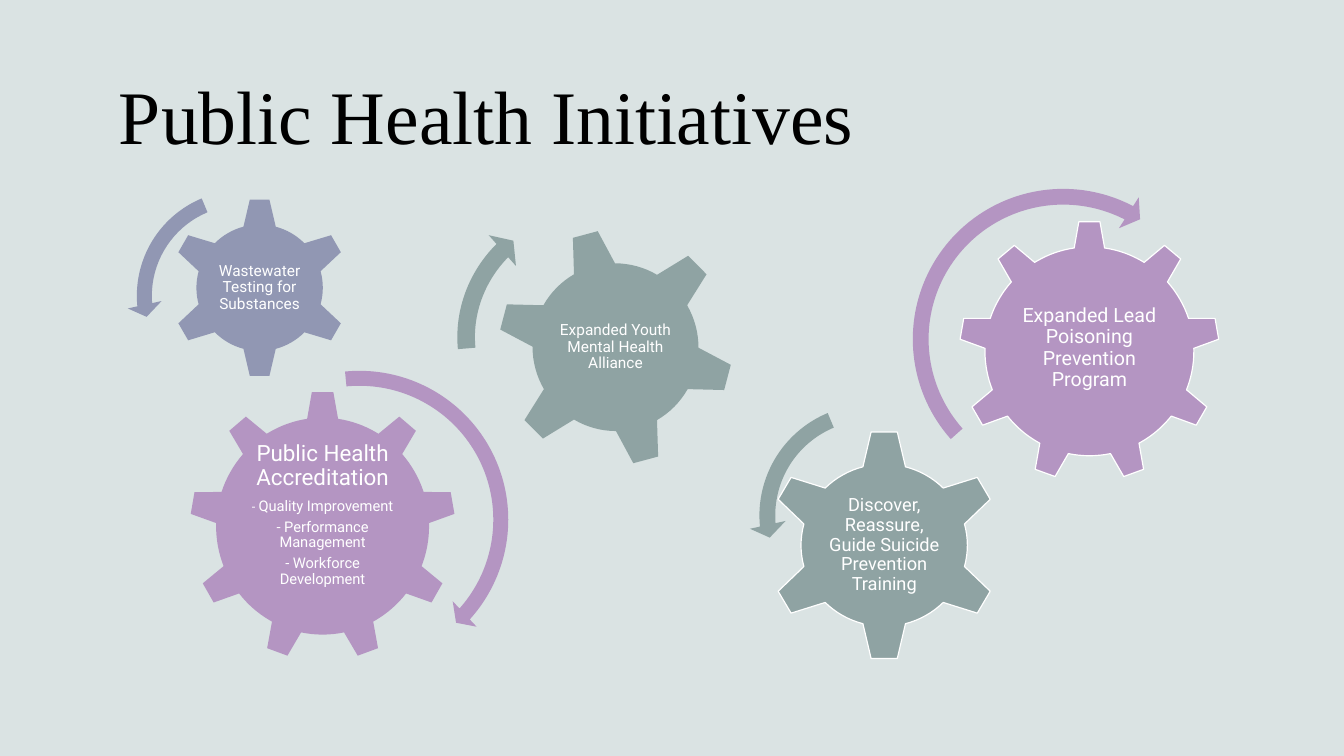
from pptx import Presentation
from pptx.dml.color import RGBColor
from pptx.enum.shapes import MSO_SHAPE
from pptx.enum.text import MSO_ANCHOR, PP_ALIGN
from pptx.util import Inches, Pt

GEAR_6, GEAR_9 = MSO_SHAPE.GEAR_6, MSO_SHAPE.GEAR_9
CLOCKWISE, COUNTER = MSO_SHAPE.CIRCULAR_ARROW, MSO_SHAPE.LEFT_CIRCULAR_ARROW
MIDDLE, BOTTOM = MSO_ANCHOR.MIDDLE, MSO_ANCHOR.BOTTOM
LEFT, CENTER = PP_ALIGN.LEFT, PP_ALIGN.CENTER

BACKGROUND = RGBColor(0xDA, 0xE3, 0xE3)
PURPLE = RGBColor(0xB4, 0x95, 0xC2)
BLUE = RGBColor(0x91, 0x97, 0xB3)
SAGE = RGBColor(0x8F, 0xA3, 0xA3)
WHITE = RGBColor(0xFF, 0xFF, 0xFF)
BLACK = RGBColor(0, 0, 0)

SLIDE_W, SLIDE_H = Inches(13.33), Inches(7.5)
CELL = SLIDE_H / 75
DEGREE = 0.6
INSET = 0.2

HEADING = "Public Health Initiatives"
HEADING_BOX = (66.65, 10.4, 111.7, 12.2)

COUNTER_SWEEP = (0.065, 7.17, 174.82, 247.3, 0.075)
INITIATIVES = [
    {"lines": [[("Public Health Accreditation", 16)],
               [("- ", 9), ("Quality Improvement", 10.5)],
               [("- Performance Management", 10.5)],
               [("- Workforce Development", 10.5)]],
     "color": PURPLE, "gear": GEAR_9, "box": (32, 52.2, 26.4, 26.8),
     "label": (15.8, 13.8), "lift": 2.2,
     "arrow": CLOCKWISE, "arrow_box": (35.65, 51.55, 31.5, 31.5),
     "sweep": (0.047, 4.98, 41.9, 264.44, 0.055)},
    {"lines": [[("Wastewater Testing for Substances", 11)]],
     "color": BLUE, "gear": GEAR_6, "box": (25.75, 28.55, 17.9, 17.9),
     "label": (8.9, 8.8),
     "arrow": COUNTER, "arrow_box": (24.05, 29.35, 22.9, 22.9),
     "sweep": COUNTER_SWEEP},
    {"lines": [[("Expanded Youth Mental Health Alliance", 11)]],
     "color": SAGE, "gear": GEAR_6, "box": (61.05, 34.45, 23.5, 23.7),
     "turn": 345, "label": (13.2, 13.3),
     "arrow": CLOCKWISE, "arrow_box": (59.4, 33.45, 30.4, 29.1),
     "sweep": (0.06, 6.57, 221.9, 175.14, 0.07)},
    {"lines": [[("Expanded Lead Poisoning Prevention Program", 14)]],
     "color": PURPLE, "gear": GEAR_9, "box": (108.05, 34.85, 25.9, 25.9),
     "outline": WHITE, "label": (15.5, 13.3), "lift": 0.6,
     "arrow": CLOCKWISE, "arrow_box": (105.45, 33.65, 31.9, 31.9),
     "arrow_turn": 244.9, "sweep": (0.049, 5.21, 52.54, 253.47, 0.057)},
    {"lines": [[("Discover, Reassure, Guide Suicide Prevention Training", 13)]],
     "color": SAGE, "gear": GEAR_6, "box": (87.7, 54.1, 23.4, 23),
     "outline": WHITE, "label": (11.7, 11.4),
     "arrow": COUNTER, "arrow_box": (86.35, 51.15, 24.1, 24.1),
     "sweep": COUNTER_SWEEP},
]


def place(column, row, columns, rows):
    lengths = (column - columns / 2, row - rows / 2, columns, rows)
    return [round(length * CELL) for length in lengths]


def write(frame, lines, font="Roboto", color=WHITE, align=CENTER,
          anchor=MIDDLE, spacing=0.9, after=0.35):
    frame.word_wrap = True
    frame.vertical_anchor = anchor
    for index, line in enumerate(lines):
        paragraph = frame.add_paragraph() if index else frame.paragraphs[0]
        paragraph.alignment = align
        paragraph.line_spacing = spacing
        paragraph.space_after = Pt(after * line[-1][1])
        for words, size in line:
            run = paragraph.add_run()
            run.text = words
            run.font.name = font
            run.font.size = Pt(size)
            run.font.color.rgb = color


def draw(slide, preset, box, color, turn=0, outline=None):
    part = slide.shapes.add_shape(preset, *place(*box))
    part.shadow.inherit = False
    part.rotation = turn
    part.fill.solid()
    part.fill.fore_color.rgb = color
    if outline is None:
        part.line.fill.background()
    else:
        part.line.color.rgb = outline
        part.line.width = Pt(0.85)
    return part


def add_label(slide, initiative):
    column, row = initiative["box"][:2]
    label = slide.shapes.add_textbox(*place(column, row, *initiative["label"]))
    frame = label.text_frame
    frame.margin_left = frame.margin_right = round(INSET * CELL)
    frame.margin_top = round(INSET * CELL)
    frame.margin_bottom = round((INSET + initiative.get("lift", 0)) * CELL)
    write(frame, initiative["lines"])


def add_arrow(slide, initiative):
    arrow = draw(slide, initiative["arrow"], initiative["arrow_box"],
                 initiative["color"], initiative.get("arrow_turn", 0))
    band, head, end, start, head_width = initiative["sweep"]
    values = (band, head * DEGREE, end * DEGREE, start * DEGREE, head_width)
    for index, value in enumerate(values):
        arrow.adjustments[index] = value


def main():
    deck = Presentation()
    deck.slide_width, deck.slide_height = SLIDE_W, SLIDE_H
    slide = deck.slides.add_slide(deck.slide_layouts[5])
    slide.background.fill.solid()
    slide.background.fill.fore_color.rgb = BACKGROUND

    title = slide.shapes.title
    title.left, title.top, title.width, title.height = place(*HEADING_BOX)
    write(title.text_frame, [[(HEADING, 54)]], font="Times New Roman",
          color=BLACK, align=LEFT, anchor=BOTTOM, after=0)

    for initiative in INITIATIVES:
        draw(slide, initiative["gear"], initiative["box"], initiative["color"],
             initiative.get("turn", 0), initiative.get("outline"))
        add_label(slide, initiative)
    for initiative in INITIATIVES:
        add_arrow(slide, initiative)
    deck.save("out.pptx")


if __name__ == "__main__":
    main()
